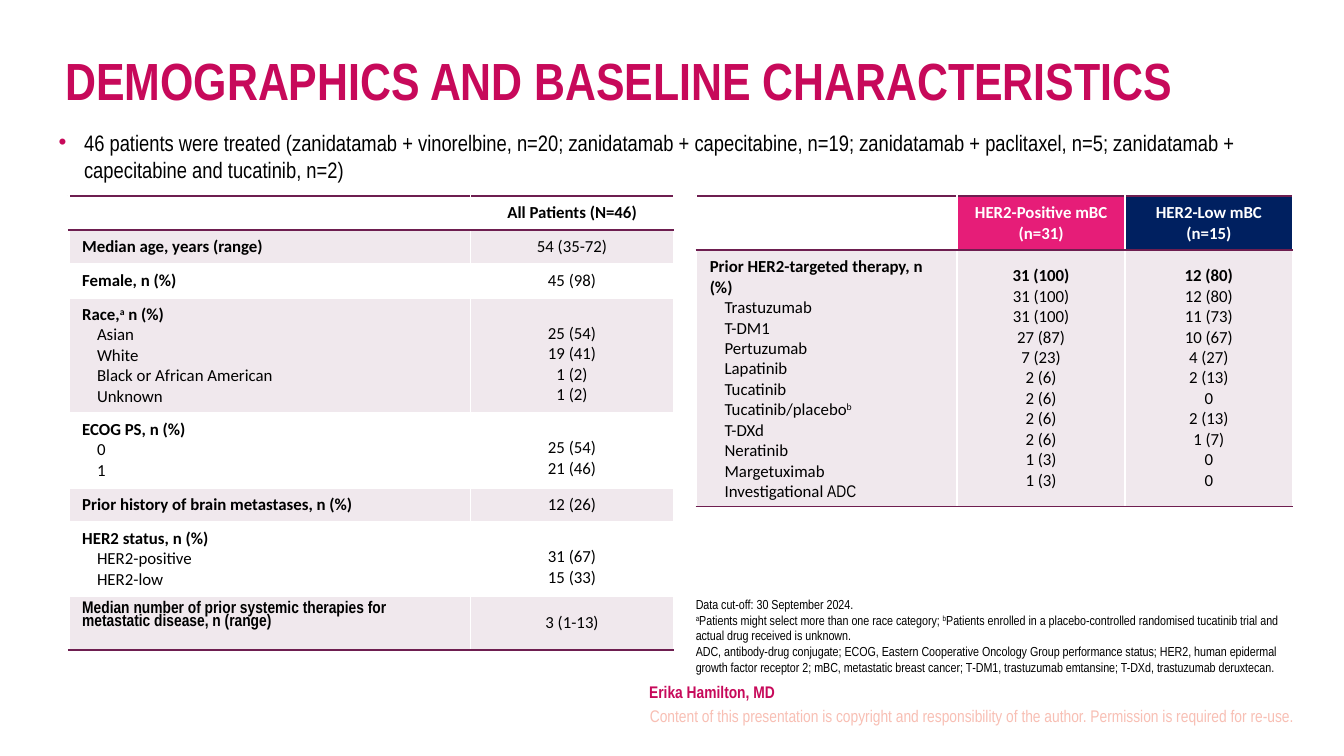
from dataclasses import dataclass

import lxml.etree
import pptx
import pptx.dml.color
import pptx.enum.text
import pptx.oxml.ns
import pptx.util

Cm = pptx.util.Cm
Pt = pptx.util.Pt
ALIGN = pptx.enum.text.PP_ALIGN
ANCHOR = pptx.enum.text.MSO_ANCHOR
qn = pptx.oxml.ns.qn


@dataclass(frozen=True)
class Theme:
    narrow: str = "Arial Narrow"
    table_font: str = "Calibri"
    accent: str = "C7095A"
    text: str = "000000"
    white: str = "FFFFFF"
    rule: str = "6E1E50"
    band: str = "F0E8ED"
    pink: str = "E61D78"
    navy: str = "002060"
    pale: str = "F8BFB4"
    title_size: int = 28
    body_size: int = 12
    small_size: int = 9
    note_size: int = 7


THEME = Theme()

# Table content: the first line of a label is bold, the others are indented
BASELINE_ROWS = [
    ([], ["All Patients (N=46)"]),
    (["Median age, years (range)"], ["54 (35-72)"]),
    (["Female, n (%)"], ["45 (98)"]),
    (["Race,^a^ n (%)", "Asian", "White", "Black or African American", "Unknown"],
     ["25 (54)", "19 (41)", "1 (2)", "1 (2)"]),
    (["ECOG PS, n (%)", "0", "1"], ["25 (54)", "21 (46)"]),
    (["Prior history of brain metastases, n (%)"], ["12 (26)"]),
    (["HER2 status, n (%)", "HER2-positive", "HER2-low"], ["31 (67)", "15 (33)"]),
    (["Median number of prior systemic therapies for metastatic disease, n (range)"],
     ["3 (1-13)"]),
]
THERAPY_LABELS = [
    "Prior HER2-targeted therapy, n (%)", "Trastuzumab", "T-DM1", "Pertuzumab",
    "Lapatinib", "Tucatinib", "Tucatinib/placebo^b^", "T-DXd", "Neratinib",
    "Margetuximab", "Investigational ",
]
THERAPY_GROUPS = [
    (["HER2-Positive mBC", "(n=31)"], THEME.pink,
     ["31 (100)", "31 (100)", "31 (100)", "27 (87)", "7 (23)", "2 (6)",
      "2 (6)", "2 (6)", "2 (6)", "1 (3)", "1 (3)"]),
    (["HER2-Low mBC", "(n=15)"], THEME.navy,
     ["12 (80)", "12 (80)", "11 (73)", "10 (67)", "4 (27)", "2 (13)",
      "0", "2 (13)", "1 (7)", "0", "0"]),
]
FOOTNOTES = [
    "Data cut-off: 30 September 2024.",
    "^a^Patients might select more than one race category; ^b^Patients enrolled in a "
    "placebo-controlled randomised tucatinib trial and actual drug received is unknown.",
    "ADC, antibody-drug conjugate; ECOG, Eastern Cooperative Oncology Group performance "
    "status; HER2, human epidermal growth factor receptor 2; mBC, metastatic breast cancer; "
    "T‑DM1, trastuzumab emtansine; T-DXd, trastuzumab deruxtecan.",
]


def add_styled_run(paragraph, text, font_name, size, color, bold=False):
    run = paragraph.add_run()
    run.text = text
    run.font.name = font_name
    run.font.size = Pt(size)
    run.font.bold = bold
    run.font.color.rgb = pptx.dml.color.RGBColor.from_string(color)
    return run


def write_paragraph(paragraph, text, *style, bold=False, align=ALIGN.LEFT):
    """Write text in which ^x^ marks a superscript."""
    paragraph.alignment = align
    for index, part in enumerate(text.split("^")):
        if part:
            run = add_styled_run(paragraph, part, *style, bold=bold)
            if index % 2:
                run._r.get_or_add_rPr().set("baseline", "30000")


def add_text(slide, box, lines, size, color, bold=False, align=ALIGN.LEFT, margins=None):
    shape = slide.shapes.add_textbox(*(Cm(value) for value in box))
    frame = shape.text_frame
    frame.word_wrap = True
    if margins:
        (frame.margin_left, frame.margin_top,
         frame.margin_right, frame.margin_bottom) = (Cm(value) for value in margins)
    for index, line in enumerate(lines):
        paragraph = frame.add_paragraph() if index else frame.paragraphs[0]
        write_paragraph(paragraph, line, THEME.narrow, size, color, bold=bold, align=align)
    return frame


def add_bullet(paragraph, indent):
    properties = paragraph._p.get_or_add_pPr()
    properties.set("marL", str(Cm(indent)))
    properties.set("indent", str(-Cm(indent)))
    bullet_color = lxml.etree.SubElement(properties, qn("a:buClr"))
    lxml.etree.SubElement(bullet_color, qn("a:srgbClr"), val=THEME.accent)
    lxml.etree.SubElement(properties, qn("a:buFont"), typeface="Arial")
    lxml.etree.SubElement(properties, qn("a:buChar"), char="•")


def add_rule(cell, side):
    line = lxml.etree.SubElement(cell._tc.get_or_add_tcPr(), qn(f"a:ln{side}"), w=str(Pt(1)))
    fill = lxml.etree.SubElement(line, qn("a:solidFill"))
    lxml.etree.SubElement(fill, qn("a:srgbClr"), val=THEME.rule)


def add_plain_table(slide, left, top, widths, heights):
    """Add an unstyled table ruled above, below and under its header."""
    shape = slide.shapes.add_table(len(heights), len(widths), Cm(left), Cm(top),
                                   Cm(sum(widths)), Cm(sum(heights)))
    table = shape.table
    table.first_row = table.horz_banding = False
    for column, width in zip(table.columns, widths):
        column.width = Cm(width)
    for index, (row, height) in enumerate(zip(table.rows, heights)):
        row.height = Cm(height)
        for cell in row.cells:
            if index < 2:
                add_rule(cell, "T")
            if index in (0, len(heights) - 1):
                add_rule(cell, "B")
    return table


def fill_cell(cell, lines, background=None, color=THEME.text, bold_lines=0, indent=0,
              align=ALIGN.LEFT, anchor=ANCHOR.TOP, font_name=THEME.table_font):
    cell.vertical_anchor = anchor
    if background:
        cell.fill.solid()
        cell.fill.fore_color.rgb = pptx.dml.color.RGBColor.from_string(background)
    else:
        cell.fill.background()
    frame = cell.text_frame
    if not lines:
        lxml.etree.SubElement(frame.paragraphs[0]._p, qn("a:endParaRPr"),
                              sz=str(THEME.small_size * 100))
    for index, line in enumerate(lines):
        paragraph = frame.add_paragraph() if index else frame.paragraphs[0]
        write_paragraph(paragraph, line, font_name, THEME.small_size, color,
                        bold=index < bold_lines, align=align)
        if index and indent:
            paragraph._p.get_or_add_pPr().set("marL", str(Cm(indent)))


def add_baseline_table(slide):
    table = add_plain_table(slide, 1.3, 3.71, [7.59, 3.84],
                            [0.64, 0.64, 0.64, 2.17, 1.42, 0.64, 1.4, 1.02])
    last = len(BASELINE_ROWS) - 1
    for index, (labels, values) in enumerate(BASELINE_ROWS):
        background = THEME.band if index % 2 else None
        label_cell, value_cell = table.cell(index, 0), table.cell(index, 1)
        fill_cell(label_cell, labels, background, bold_lines=1, indent=0.28,
                  font_name=THEME.narrow if index == last else THEME.table_font)
        fill_cell(value_cell, values, background, bold_lines=int(index == 0),
                  align=ALIGN.CENTER, anchor=ANCHOR.MIDDLE if index == last else ANCHOR.TOP)
        # Values of a group start beside its second label line
        if len(values) > 1:
            value_cell.margin_top = Cm(0.48)
    table.cell(last, 0).text_frame.paragraphs[0].line_spacing = 0.85


def add_therapy_table(slide):
    table = add_plain_table(slide, 13.16, 3.71, [4.93, 3.17, 3.17], [1.02, 4.84])
    fill_cell(table.cell(0, 0), [])
    label_cell = table.cell(1, 0)
    fill_cell(label_cell, THERAPY_LABELS, THEME.band, bold_lines=1, indent=0.28,
              anchor=ANCHOR.MIDDLE)
    add_styled_run(label_cell.text_frame.paragraphs[-1], "ADC", THEME.narrow,
                   THEME.small_size, THEME.text)
    for column, (heading, color, values) in enumerate(THERAPY_GROUPS, start=1):
        fill_cell(table.cell(0, column), heading, color, THEME.white, bold_lines=2,
                  align=ALIGN.CENTER, anchor=ANCHOR.MIDDLE)
        fill_cell(table.cell(1, column), values, THEME.band, bold_lines=1,
                  align=ALIGN.CENTER, anchor=ANCHOR.MIDDLE)


def main():
    presentation = pptx.Presentation()
    presentation.slide_width, presentation.slide_height = Cm(25.4), Cm(14.29)
    slide = presentation.slides.add_slide(presentation.slide_layouts[6])

    # Title and summary
    title = add_text(slide, (0.99, 1.02, 23.37, 1.19),
                     ["DEMOGRAPHICS AND BASELINE CHARACTERISTICS"],
                     THEME.title_size, THEME.accent, bold=True)
    title.paragraphs[0].line_spacing = 0.8
    summary = add_text(slide, (0.86, 2.31, 23.83, 1.3), [
        "46 patients were treated (zanidatamab + vinorelbine, n=20; zanidatamab + "
        "capecitabine, n=19; zanidatamab + paclitaxel, n=5; "
        "zanidatamab + capecitabine and tucatinib, n=2)"], THEME.body_size, THEME.text)
    add_bullet(summary.paragraphs[0], 0.48)

    # Tables
    add_baseline_table(slide)
    add_therapy_table(slide)

    # Footnotes, author and copyright
    add_text(slide, (12.9, 11.15, 11.79, 1.75), FOOTNOTES, THEME.note_size, THEME.text)
    author = add_text(slide, (11.63, 12.83, 7.77, 0.48), ["Erika Hamilton, MD"],
                      THEME.small_size, THEME.accent, bold=True, margins=(0.64, 0, 0, 0))
    author.vertical_anchor = ANCHOR.MIDDLE
    add_text(slide, (12.17, 13.34, 12.52, 0.41),
             ["Content of this presentation is copyright and responsibility of the author. "
              "Permission is required for re-use."],
             THEME.small_size, THEME.pale, align=ALIGN.RIGHT, margins=(0, 0, 0.25, 0))

    presentation.save("out.pptx")


if __name__ == "__main__":
    main()
